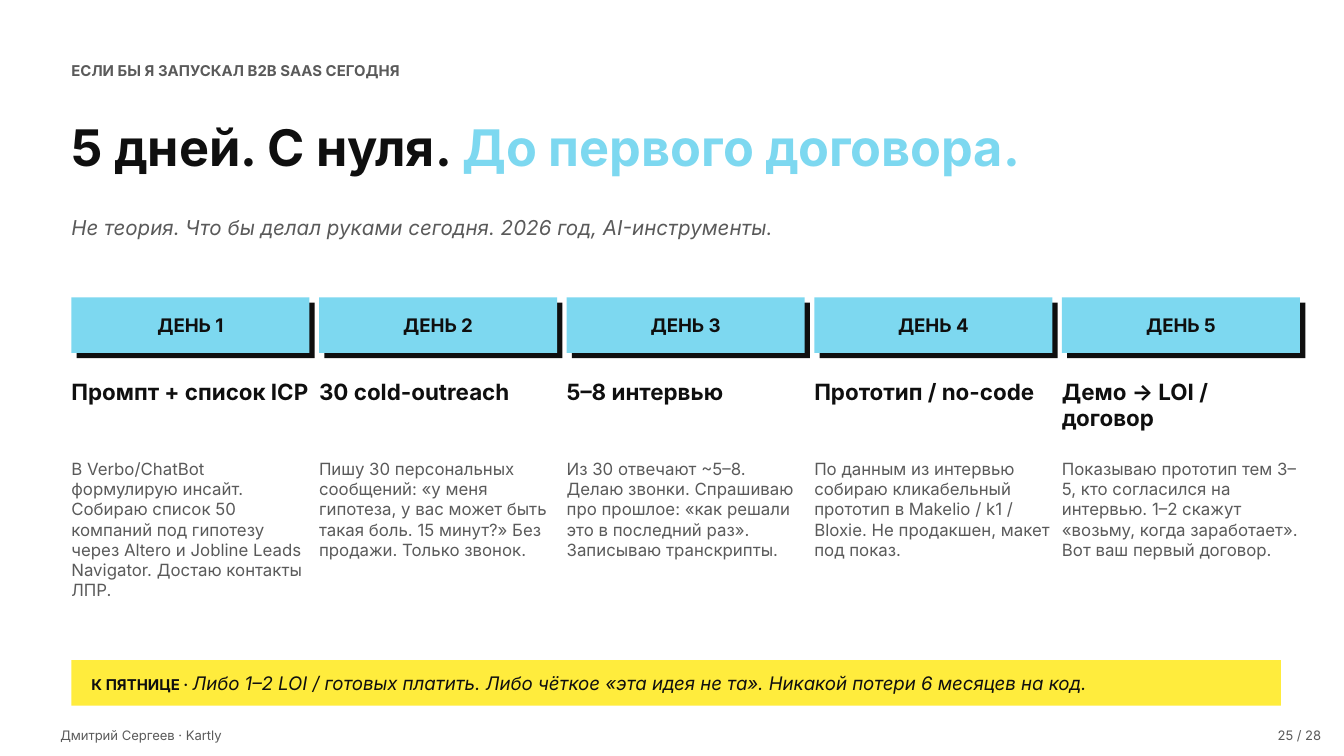
import pptx
import pptx.dml.color
import pptx.enum.shapes
import pptx.enum.text
import pptx.util
from pptx.util import Cm

FONT = "Inter"
INK, GRAY, BLUE, YELLOW = "0F0F0F", "5A5A5A", "7DD8F0", "FFEC3D"
LEFT, CONTENT_WIDTH = 1.35, 22.86
DAY_WIDTH, DAY_STEP = 4.5, 4.68
DAY_TOP, DAY_HEIGHT, SHADOW_OFFSET = 5.62, 1.05, 0.1
BANNER_TOP, BANNER_HEIGHT = 12.48, 0.86
FOOTER_TOP, FOOTER_HEIGHT = 13.61, 0.58
ALIGN = pptx.enum.text.PP_ALIGN
ANCHOR = pptx.enum.text.MSO_ANCHOR

DAYS = [
    ("Промпт + список ICP",
     "В Verbo/ChatBot формулирую инсайт. Собираю список 50 компаний под гипотезу "
     "через Altero и Jobline Leads Navigator. Достаю контакты ЛПР."),
    ("30 cold-outreach",
     "Пишу 30 персональных сообщений: «у меня гипотеза, у вас может быть такая боль. "
     "15 минут?» Без продажи. Только звонок."),
    ("5–8 интервью",
     "Из 30 отвечают ~5–8. Делаю звонки. Спрашиваю про прошлое: «как решали это "
     "в последний раз». Записываю транскрипты."),
    ("Прототип / no-code",
     "По данным из интервью собираю кликабельный прототип в Makelio / k1 / Bloxie. "
     "Не продакшен, макет под показ."),
    ("Демо → LOI / договор",
     "Показываю прототип тем 3–5, кто согласился на интервью. 1–2 скажут «возьму, "
     "когда заработает». Вот ваш первый договор."),
]


def color(value):
    """Turn a hex string into a colour."""
    return pptx.dml.color.RGBColor.from_string(value)


def add_run(paragraph, text, size, fill=INK, bold=False, italic=False):
    """Append a formatted run to a paragraph."""
    run = paragraph.add_run()
    run.text = text
    run.font.name = FONT
    run.font.size = pptx.util.Pt(size)
    run.font.bold = bold
    run.font.italic = italic
    run.font.color.rgb = color(fill)


def add_text(slide, text, left, top, width, height, size,
             align=ALIGN.LEFT, anchor=ANCHOR.MIDDLE, **style):
    """Add a text box without margins and return its paragraph."""
    shape = slide.shapes.add_textbox(Cm(left), Cm(top), Cm(width), Cm(height))
    frame = shape.text_frame
    frame.word_wrap = True
    frame.vertical_anchor = anchor
    frame.margin_left = frame.margin_right = frame.margin_top = frame.margin_bottom = 0
    paragraph = frame.paragraphs[0]
    paragraph.alignment = align
    add_run(paragraph, text, size, **style)
    return paragraph


def add_block(slide, left, top, width, height, fill):
    """Add a plain filled rectangle."""
    shape = slide.shapes.add_shape(pptx.enum.shapes.MSO_SHAPE.RECTANGLE,
                                   Cm(left), Cm(top), Cm(width), Cm(height))
    shape.shadow.inherit = False
    shape.fill.solid()
    shape.fill.fore_color.rgb = color(fill)
    shape.line.fill.background()


def add_day(slide, index, title, description):
    """Add the column of one day: label, title and description."""
    left = LEFT + index * DAY_STEP
    add_block(slide, left + SHADOW_OFFSET, DAY_TOP + SHADOW_OFFSET, DAY_WIDTH, DAY_HEIGHT, INK)
    add_block(slide, left, DAY_TOP, DAY_WIDTH, DAY_HEIGHT, BLUE)
    add_text(slide, f"ДЕНЬ {index + 1}", left, DAY_TOP, DAY_WIDTH, DAY_HEIGHT, 10,
             align=ALIGN.CENTER, bold=True)
    add_text(slide, title, left, 7.14, DAY_WIDTH, 1.35, 12, anchor=ANCHOR.TOP, bold=True)
    add_text(slide, description, left, 8.67, DAY_WIDTH, 4.57, 9, anchor=ANCHOR.TOP, fill=GRAY)


def add_header(slide):
    """Add the overline, the two-colour title and the subtitle."""
    add_text(slide, "ЕСЛИ БЫ Я ЗАПУСКАЛ B2B SAAS СЕГОДНЯ", LEFT, 1.05, CONTENT_WIDTH, 0.58, 8,
             fill=GRAY, bold=True)
    title = add_text(slide, "5 дней. С нуля. ", LEFT, 1.81, CONTENT_WIDTH, 1.9, 27, bold=True)
    add_run(title, "До первого договора.", 27, fill=BLUE, bold=True)
    add_text(slide, "Не теория. Что бы делал руками сегодня. 2026 год, AI-инструменты.",
             LEFT, 3.91, CONTENT_WIDTH, 0.76, 11, fill=GRAY, italic=True)


def add_banner(slide):
    """Add the yellow strip with the result of the week."""
    add_block(slide, LEFT, BANNER_TOP, CONTENT_WIDTH, BANNER_HEIGHT, YELLOW)
    result = add_text(slide, "К ПЯТНИЦЕ · ", LEFT + 0.38, BANNER_TOP, 21.9, BANNER_HEIGHT, 8,
                      bold=True)
    add_run(result, "Либо 1–2 LOI / готовых платить. Либо чёткое «эта идея не та». "
            "Никакой потери 6 месяцев на код.", 10, italic=True)


def add_footer(slide):
    """Add the page number and the author."""
    add_text(slide, "25 / 28", 23.62, FOOTER_TOP, 1.35, FOOTER_HEIGHT, 7,
             align=ALIGN.RIGHT, fill=GRAY)
    add_text(slide, "Дмитрий Сергеев · Kartly", 1.14, FOOTER_TOP, 9.53, FOOTER_HEIGHT, 7,
             fill=GRAY)


def main():
    """Build the slide and save the presentation."""
    presentation = pptx.Presentation()
    presentation.slide_width = Cm(25.4)
    presentation.slide_height = Cm(14.29)
    slide = presentation.slides.add_slide(presentation.slide_layouts[6])
    add_header(slide)
    for index, (title, description) in enumerate(DAYS):
        add_day(slide, index, title, description)
    add_banner(slide)
    add_footer(slide)
    presentation.save("out.pptx")


if __name__ == "__main__":
    main()
